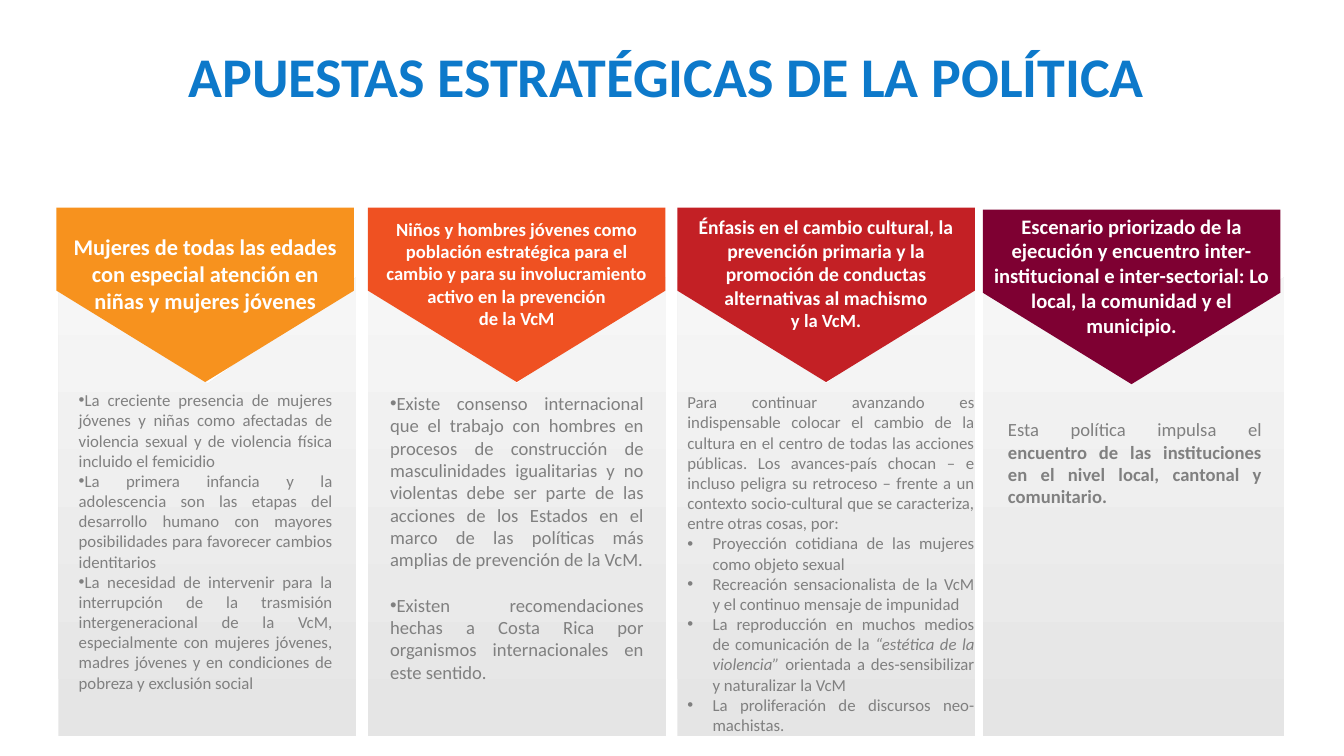
from lxml.etree import SubElement
from pptx import Presentation
from pptx.dml.color import RGBColor
from pptx.enum.shapes import MSO_SHAPE
from pptx.enum.text import MSO_ANCHOR, MSO_AUTO_SIZE, PP_ALIGN
from pptx.oxml.ns import qn
from pptx.util import Pt


def rgb(value):
    return RGBColor.from_string(value)


class Deck:
    """Builds the strategy slide from styled elements measured in points."""

    font = "Calibri"
    blue, grey, white = "0D79CA", "808080", "FFFFFF"
    panel_dark, panel_light = "E5E5E5", "F6F6F6"

    def __init__(self, prs):
        self.s = prs.slides.add_slide(prs.slide_layouts[5])

    def frame(self, tf, margins, anchor):
        left, top, right, bottom = (Pt(m) for m in margins)
        values = {"margin_left": left, "margin_top": top, "margin_right": right,
                  "margin_bottom": bottom, "word_wrap": True,
                  "auto_size": MSO_AUTO_SIZE.NONE, "vertical_anchor": anchor}
        for name, value in values.items():
            setattr(tf, name, value)

    def add_runs(self, p, runs, size, color, align, **extra):
        p.alignment = align
        for text, changes in runs:
            r = p.add_run()
            r.text = text
            values = {"name": self.font, "size": Pt(size), **extra, **changes}
            for name, value in values.items():
                setattr(r.font, name, value)
            r.font.color.rgb = rgb(color)

    def bullet(self, p, indent):
        pPr = p._p.get_or_add_pPr()
        pPr.set("marL", str(Pt(indent)))
        pPr.set("indent", str(-Pt(indent)))
        SubElement(pPr, qn("a:buFont")).set("typeface", "Arial")
        SubElement(pPr, qn("a:buChar")).set("char", "•")

    def title(self, text, box):
        sp = self.s.shapes.title
        sp.left, sp.top, sp.width, sp.height = (Pt(v) for v in box)
        self.frame(sp.text_frame, (0, 3.6, 7.2, 3.6), MSO_ANCHOR.MIDDLE)
        self.add_runs(sp.text_frame.paragraphs[0], [(text, {})], 40, self.blue,
                      PP_ALIGN.CENTER, bold=True)

    def panel(self, x, y, w, h, notch):
        fb = self.s.shapes.build_freeform(Pt(x), Pt(y))
        corners = [(x + w / 2, y + notch), (x + w, y), (x + w, y + h), (x, y + h)]
        fb.add_line_segments([(Pt(a), Pt(b)) for a, b in corners], close=True)
        sp = fb.convert_to_shape()
        sp.shadow.inherit = False
        sp.line.fill.background()
        sp.fill.gradient()
        sp.fill.gradient_angle = 90
        for stop, color in zip(sp.fill.gradient_stops, (self.panel_dark, self.panel_light)):
            stop.color.rgb = rgb(color)

    def arrow(self, x, y, w, h, color, lines):
        sp = self.s.shapes.add_shape(MSO_SHAPE.DOWN_ARROW, Pt(x), Pt(y), Pt(w), Pt(h))
        sp.adjustments[0], sp.adjustments[1] = 1, 0.524
        sp.shadow.inherit = False
        sp.line.fill.background()
        sp.fill.solid()
        sp.fill.fore_color.rgb = rgb(color)
        tf = sp.text_frame
        self.frame(tf, (7.2, 38.2, 7.2, 3.6), MSO_ANCHOR.MIDDLE)
        for i, (text, size) in enumerate(lines):
            p = tf.add_paragraph() if i else tf.paragraphs[0]
            self.add_runs(p, [(text, {})], size, self.white, PP_ALIGN.CENTER, bold=True)

    def body(self, box, size, gap, paragraphs):
        tf = self.s.shapes.add_textbox(*(Pt(v) for v in box)).text_frame
        self.frame(tf, (0, 0, 0, 0), MSO_ANCHOR.TOP)
        for i, (indent, runs) in enumerate(paragraphs):
            p = tf.add_paragraph() if i else tf.paragraphs[0]
            self.add_runs(p, runs, size, self.grey, PP_ALIGN.JUSTIFY)
            if i and gap:
                p.space_before = Pt(gap)
            if indent is not None:
                self.bullet(p, indent)


COLUMNS = [
    {"panel": (41.8, 213), "arrow": (40.3, 148.3), "color": "F7921E",
     "head": [("Mujeres de todas las edades con especial atención en niñas y mujeres jóvenes", 16)],
     "box": (56.2, 278.6, 181.4, 218), "size": 12, "gap": 0,
     "body": [
         (0, [("La creciente presencia de mujeres jóvenes y niñas como afectadas de violencia "
               "sexual y de violencia física incluido el femicidio", {})]),
         (0, [("La primera infancia y la adolescencia son las etapas del desarrollo humano con "
               "mayores posibilidades para favorecer cambios identitarios", {})]),
         (0, [("La necesidad de intervenir para la interrupción de la trasmisión "
               "intergeneracional de la VcM, especialmente con mujeres jóvenes, madres jóvenes "
               "y en condiciones de pobreza y exclusión social", {})])]},
    {"panel": (262.8, 213), "arrow": (262.8, 148.3), "color": "EF5122",
     "head": [("Niños y hombres jóvenes como población estratégica para el cambio y para su "
               "involucramiento activo en la prevención", 13.3), ("de la VcM", 13.3)],
     "box": (278.6, 280, 181.4, 210), "size": 13.3, "gap": 16.2,
     "body": [
         (0, [("Existe consenso internacional que el trabajo con hombres en procesos de "
               "construcción de masculinidades igualitarias y no violentas debe ser parte de "
               "las acciones de los Estados en el marco de las políticas más amplias de "
               "prevención de la VcM.", {})]),
         (0, [("Existen recomendaciones hechas a Costa Rica por organismos internacionales en "
               "este sentido.", {})])]},
    {"panel": (483.8, 213), "arrow": (483.8, 148.3), "color": "C32025",
     "head": [("Énfasis en el cambio cultural, la prevención primaria y la promoción de "
               "conductas alternativas al machismo", 14), ("y la VcM.", 13.3)],
     "box": (491, 280, 205.2, 262), "size": 12, "gap": 0,
     "body": [
         (None, [("Para continuar avanzando es indispensable colocar el cambio de la cultura en "
                  "el centro de todas las acciones públicas. Los avances-país chocan – e incluso "
                  "peligra su retroceso – frente a un contexto socio-cultural que se "
                  "caracteriza, entre otras cosas, por:", {})]),
         (18, [("Proyección cotidiana de las mujeres como objeto sexual", {})]),
         (18, [("Recreación sensacionalista de la VcM y el continuo mensaje de impunidad", {})]),
         (18, [("La reproducción en muchos medios de comunicación de la ", {}),
               ("“estética de la violencia”", {"italic": True}),
               (" orientada a des-sensibilizar y naturalizar la VcM", {})]),
         (18, [("La proliferación de discursos neo-machistas.", {})])]},
    {"panel": (702, 215.5), "arrow": (702, 149.8), "color": "7E0032",
     "head": [("Escenario priorizado de la ejecución y encuentro inter-institucional e "
               "inter-sectorial: Lo local, la comunidad y el municipio.", 14.7)],
     "box": (720, 298.8, 181.4, 64.8), "size": 13.3, "gap": 0,
     "body": [
         (None, [("Esta política impulsa el ", {}),
                 ("encuentro de las instituciones en el nivel local, cantonal y comunitario.",
                  {"bold": True})])]},
]


def main():
    prs = Presentation()
    prs.slide_width, prs.slide_height = Pt(960), Pt(540)
    deck = Deck(prs)
    deck.title("APUESTAS ESTRATÉGICAS DE LA POLÍTICA", (40.3, 35.3, 878.4, 37.4))
    for col in COLUMNS:
        x, w = col["panel"]
        deck.panel(x, 198, w, 328, 76.3)
        deck.arrow(*col["arrow"], 212.5, 124.6, col["color"], col["head"])
        deck.body(col["box"], col["size"], col["gap"], col["body"])
    prs.save("out.pptx")


if __name__ == "__main__":
    main()
